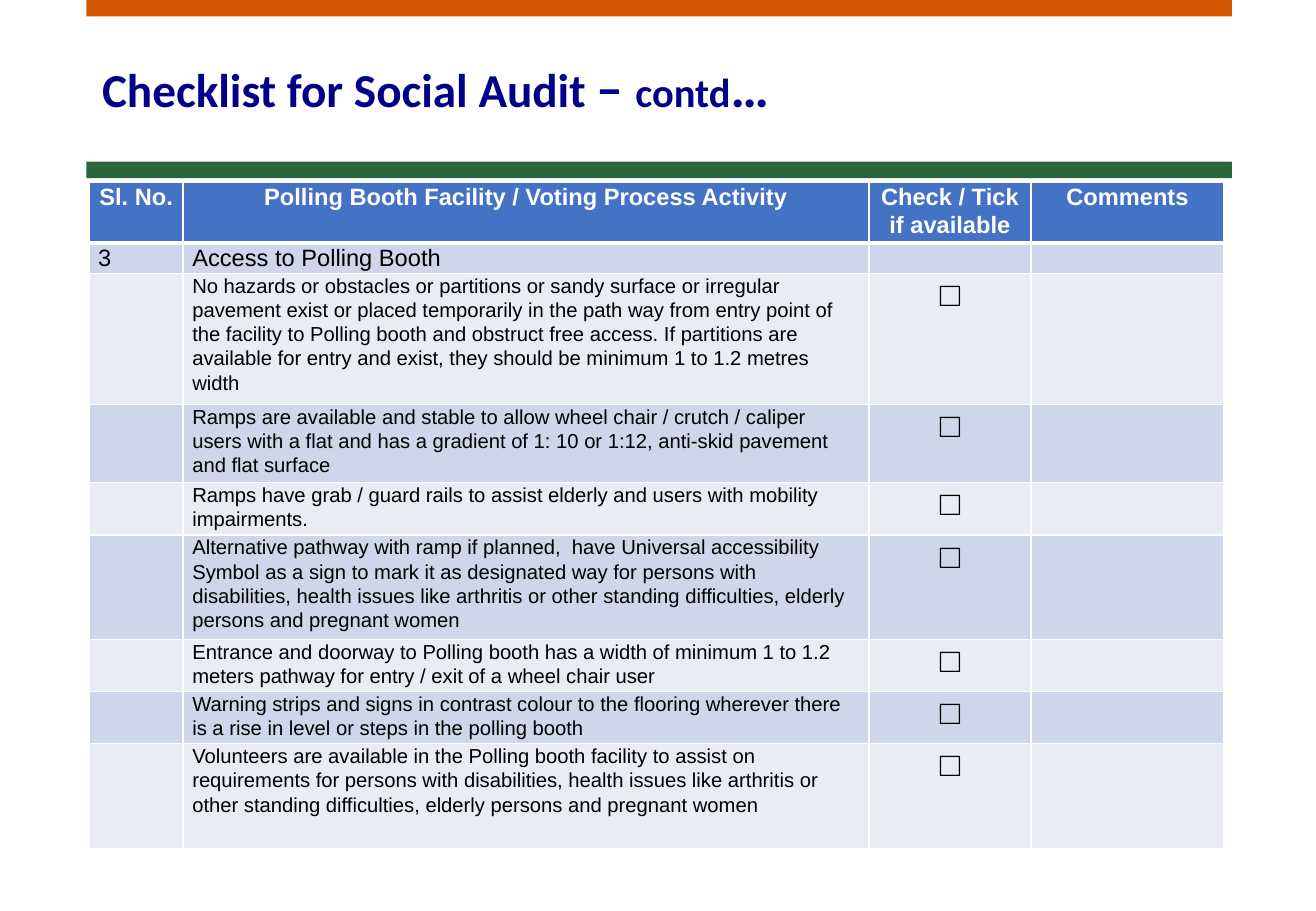
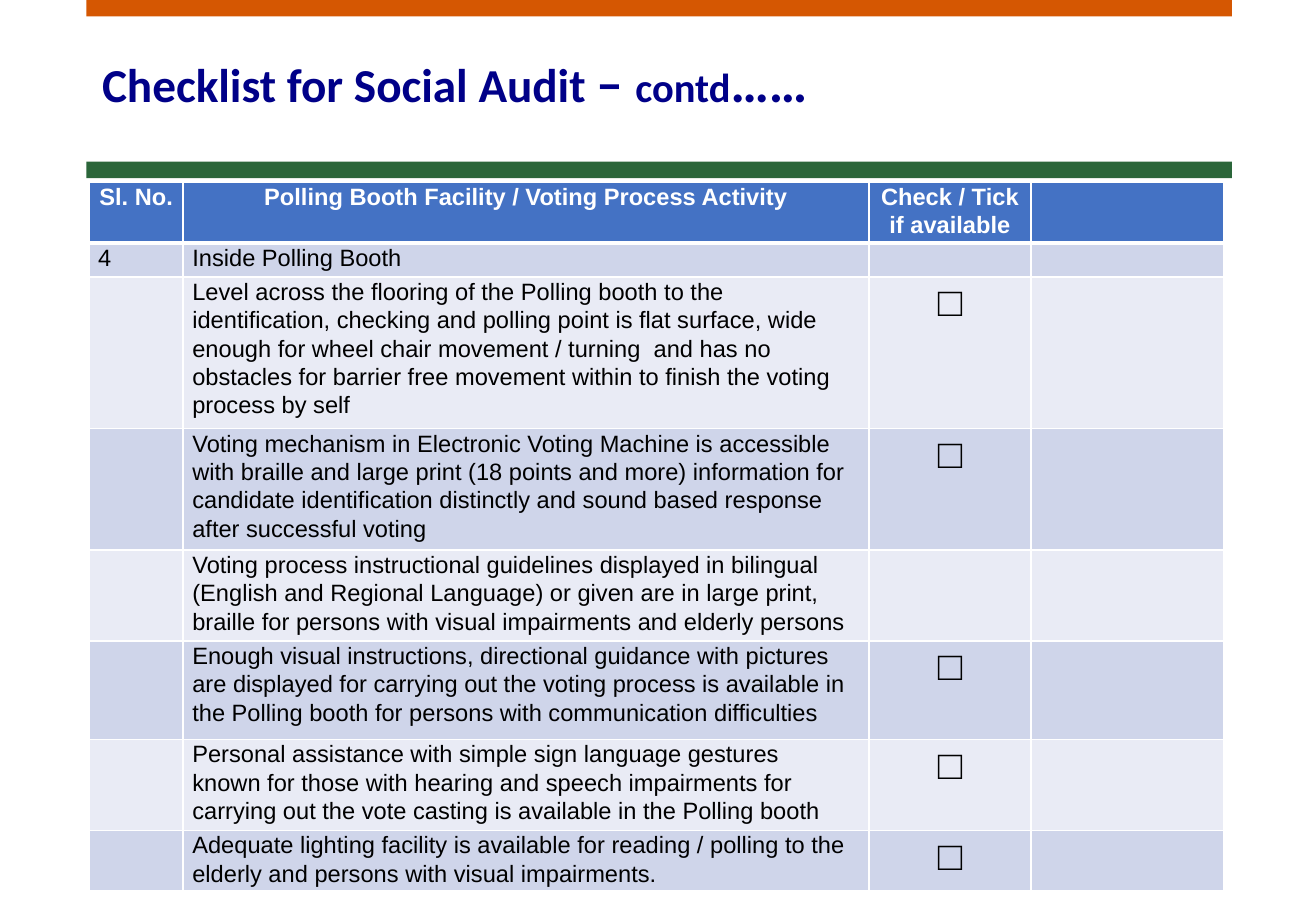
import pptx
import pptx.dml.color
import pptx.enum.shapes
import pptx.enum.text
import pptx.util
from lxml import etree
from pptx.oxml.ns import qn

Pt = pptx.util.Pt
RGBColor = pptx.dml.color.RGBColor
CENTER = pptx.enum.text.PP_ALIGN.CENTER
MIDDLE = pptx.enum.text.MSO_ANCHOR.MIDDLE

WHITE = RGBColor(0xFF, 0xFF, 0xFF)
BLACK = RGBColor(0x00, 0x00, 0x00)
NAVY = RGBColor(0x00, 0x00, 0x88)
ORANGE = RGBColor(0xD5, 0x57, 0x02)
GREEN = RGBColor(0x2B, 0x66, 0x3A)
HEADER_BLUE = RGBColor(0x44, 0x72, 0xC4)
ROW_TINTS = (RGBColor(0xE9, 0xEB, 0xF5), RGBColor(0xCF, 0xD5, 0xEA))

COLUMN_WIDTHS = (55.8, 406.5, 96, 114.4)
HEADINGS = ("Sl. No.", "Polling Booth Facility / Voting Process Activity",
            "Check / Tick\nif available")
BOX = "□"
HEADING_SIZE = 14

# Each item: activity, row height, mark in the check column
ACCESS_ITEMS = (
    ("No hazards or obstacles or partitions or sandy surface or irregular pavement "
     "exist or placed temporarily in the path way from entry point of the facility "
     "to Polling booth and obstruct free access. If partitions are available for "
     "entry and exist, they should be minimum 1 to 1.2 metres width", 77.8, BOX),
    ("Ramps are available and stable to allow wheel chair / crutch / caliper users "
     "with a flat and has a gradient of 1: 10 or 1:12, anti-skid pavement and flat "
     "surface", 46.4, BOX),
    ("Ramps have grab / guard rails to assist elderly and users with mobility "
     "impairments.", 30.9, BOX),
    ("Alternative pathway with ramp if planned,  have Universal accessibility Symbol "
     "as a sign to mark it as designated way for persons with disabilities, health "
     "issues like arthritis or other standing difficulties, elderly persons and "
     "pregnant women", 62, BOX),
    ("Entrance and doorway to Polling booth has a width of minimum 1 to 1.2 meters "
     "pathway for entry / exit of a wheel chair user", 30.9, BOX),
    ("Warning strips and signs in contrast colour to the flooring wherever there is "
     "a rise in level or steps in the polling booth", 30.9, BOX),
    ("Volunteers are available in the Polling booth facility to assist on "
     "requirements for persons with disabilities, health issues like arthritis or "
     "other standing difficulties, elderly persons and pregnant women", 62, BOX),
)
INSIDE_ITEMS = (
    ("Level across the flooring of the Polling booth to the identification, checking "
     "and polling point is flat surface, wide enough for wheel chair movement / "
     "turning  and has no obstacles for barrier free movement within to finish the "
     "voting process by self", 86.4, BOX),
    ("Voting mechanism in Electronic Voting Machine is accessible with braille and "
     "large print (18 points and more) information for candidate identification "
     "distinctly and sound based response after successful voting", 69.2, BOX),
    ("Voting process instructional guidelines displayed in bilingual (English and "
     "Regional Language) or given are in large print, braille for persons with "
     "visual impairments and elderly persons", 51.6, ""),
    ("Enough visual instructions, directional guidance with pictures  are displayed "
     "for carrying out the voting process is available in the Polling booth for "
     "persons with communication difficulties", 58.3, BOX),
    ("Personal assistance with simple sign language gestures  known for those with "
     "hearing and speech impairments for carrying out the vote casting is available "
     "in the Polling booth", 51.6, BOX),
    ("Adequate lighting facility is available for reading / polling to the elderly "
     "and persons with visual impairments.", 36, BOX),
)


def write(paragraph, text, *, size, font="Arial", color=BLACK, bold=False,
          align=None, spacing=1.07):
    """Append one formatted run; an empty text only fixes the line's size."""
    paragraph.line_spacing = spacing
    paragraph.alignment = align
    if not text:
        etree.SubElement(paragraph._p, qn("a:endParaRPr"), sz=str(size * 100))
        return
    run = paragraph.add_run()
    run.text = text
    run.font.name = font
    run.font.size = Pt(size)
    run.font.bold = bold
    run.font.color.rgb = color


def add_band(slide, top, color):
    band = slide.shapes.add_shape(pptx.enum.shapes.MSO_SHAPE.RECTANGLE,
                                  Pt(51.2), Pt(top), Pt(679), Pt(9.8))
    band.shadow.inherit = False
    band.fill.solid()
    band.fill.fore_color.rgb = color
    band.line.fill.background()


def add_title(slide, dots, height):
    title = slide.shapes.add_textbox(Pt(53.4), Pt(28.8), Pt(672.5), Pt(height))
    title.text_frame.word_wrap = True
    title.text_frame.vertical_anchor = MIDDLE
    line = title.text_frame.paragraphs[0]
    for text, size in (("Checklist for Social Audit ", 28), ("– ", 32),
                       ("contd", 24), (dots, 32)):
        write(line, text, size=size, font="Calibri", color=NAVY, bold=True,
              spacing=0.9)


def set_borders(cell, top, bottom):
    """Draw the four white edges of a cell, ahead of its fill."""
    properties = cell._tc.get_or_add_tcPr()
    edges = (("a:lnL", 1), ("a:lnR", 1), ("a:lnT", top), ("a:lnB", bottom))
    for position, (tag, width) in enumerate(edges):
        edge = etree.Element(qn(tag), w=str(Pt(width)))
        fill = etree.SubElement(edge, qn("a:solidFill"))
        etree.SubElement(fill, qn("a:srgbClr"), val=str(WHITE))
        properties.insert(position, edge)


def fill_cell(cell, text, tint, top=1, bottom=1, **text_format):
    cell.margin_left = cell.margin_right = Pt(5.4)
    cell.margin_top = cell.margin_bottom = 0
    cell.fill.solid()
    cell.fill.fore_color.rgb = tint
    set_borders(cell, top, bottom)
    for index, line in enumerate(text.split("\n")):
        frame = cell.text_frame
        paragraph = frame.add_paragraph() if index else frame.paragraphs[0]
        write(paragraph, line, **text_format)


def add_checklist(slide, number, section, items, *, last_heading, head_heights,
                  item_size, box_size):
    heights = (*head_heights, *(height for _, height, _ in items))
    table = slide.shapes.add_table(len(heights), len(COLUMN_WIDTHS), Pt(52.8), Pt(108),
                                   Pt(sum(COLUMN_WIDTHS)), Pt(sum(heights))).table
    table.horz_banding = False
    for column, width in zip(table.columns, COLUMN_WIDTHS):
        column.width = Pt(width)
    for row, height in zip(table.rows, heights):
        row.height = Pt(height)

    # Heading row
    for column, heading in enumerate((*HEADINGS, last_heading)):
        fill_cell(table.cell(0, column), heading, HEADER_BLUE, bottom=3,
                  size=HEADING_SIZE, color=WHITE, bold=True, align=CENTER)

    # Section row, then one row per activity
    for column, text in enumerate((number, section, "", "")):
        fill_cell(table.cell(1, column), text, ROW_TINTS[1], top=3,
                  size=HEADING_SIZE)
    for row, (activity, _, mark) in enumerate(items, start=2):
        tint = ROW_TINTS[row % 2]
        for column, text in enumerate(("", activity, mark, "")):
            is_check = column == 2
            fill_cell(table.cell(row, column), text, tint,
                      size=box_size if is_check else item_size,
                      align=CENTER if is_check else None)


def add_audit_slide(deck, dots, title_height):
    slide = deck.slides.add_slide(deck.slide_layouts[6])
    add_band(slide, 0, ORANGE)
    add_band(slide, 95.9, GREEN)
    add_title(slide, dots, title_height)
    return slide


def main():
    deck = pptx.Presentation()
    deck.slide_width, deck.slide_height = Pt(780), Pt(540)

    # Access to the booth
    access = add_audit_slide(deck, "…", 49)
    add_checklist(access, "3", "Access to Polling Booth", ACCESS_ITEMS,
                  last_heading="Comments", head_heights=(33.5, 17),
                  item_size=12, box_size=20)

    # Inside the booth
    inside = add_audit_slide(deck, "……", 43.2)
    add_checklist(inside, "4", "Inside Polling Booth", INSIDE_ITEMS,
                  last_heading="", head_heights=(34.4, 20.3),
                  item_size=14, box_size=24)

    deck.save("out.pptx")


if __name__ == "__main__":
    main()
